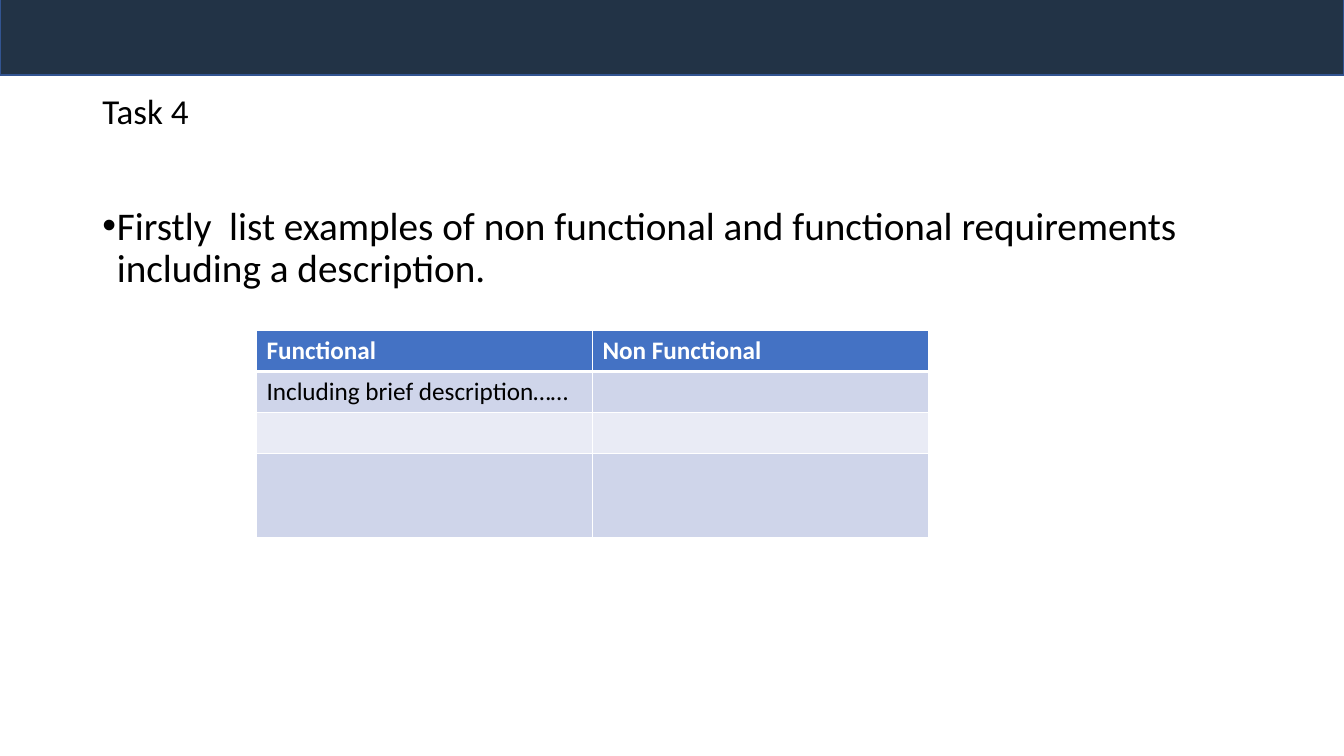
from dataclasses import dataclass

from lxml.etree import SubElement
from pptx import Presentation
from pptx.dml.color import RGBColor as RGB
from pptx.enum.shapes import MSO_SHAPE as Shape
from pptx.enum.text import MSO_ANCHOR as Anchor, PP_ALIGN as Align
from pptx.oxml.ns import qn
from pptx.util import Pt

TITLE = "Task 4"
INSTRUCTION = "Firstly  list examples of non functional and functional requirements including a description."
REQUIREMENTS = [
    ("Functional", "Non Functional"),
    ("Including brief description……", ""),
    ("", ""),
    ("", ""),
]
ROW_HEIGHTS = (29.2, 29.2, 29.2, 60)
COLUMN_WIDTH = 240


@dataclass(frozen=True)
class Theme:
    font: str = "Calibri"
    title_size: float = 25
    body_size: float = 28
    table_size: float = 18
    ink: str = "000000"
    white: str = "FFFFFF"
    banner: str = "223346"
    banner_edge: str = "325491"
    header: str = "4472C4"
    bands: tuple = ("E9EBF5", "CFD5EA")


THEME = Theme()


def write(frame, text, size, color=THEME.ink, bold=False, spacing=1.0, bullet=None, indent=0):
    frame.word_wrap = True
    paragraph = frame.paragraphs[0]
    paragraph.alignment = Align.LEFT
    paragraph.line_spacing = spacing
    if bullet:
        properties = paragraph._p.get_or_add_pPr()
        properties.set("marL", str(Pt(indent)))
        properties.set("indent", str(-Pt(indent)))
        SubElement(properties, qn("a:buFont"), typeface="Arial")
        SubElement(properties, qn("a:buChar"), char=bullet)
    font = paragraph.font
    if text:
        run = paragraph.add_run()
        run.text = text
        font = run.font
    font.name, font.size, font.bold = THEME.font, Pt(size), bold
    font.color.rgb = RGB.from_string(color)


def add_borders(cell, **widths):
    properties = cell._tc.get_or_add_tcPr()
    for side in "LRTB":
        line = SubElement(properties, qn(f"a:ln{side}"), w=str(Pt(widths.get(side, 1))))
        fill = SubElement(line, qn("a:solidFill"))
        SubElement(fill, qn("a:srgbClr"), val=THEME.white)


def add_banner(slide):
    banner = slide.shapes.add_shape(Shape.RECTANGLE, 0, Pt(-2.5), Pt(960), Pt(56))
    banner.shadow.inherit = False
    banner.fill.solid()
    banner.fill.fore_color.rgb = RGB.from_string(THEME.banner)
    banner.line.color.rgb = RGB.from_string(THEME.banner_edge)
    banner.line.width = Pt(1)


def add_requirements(slide):
    columns = len(REQUIREMENTS[0])
    table = slide.shapes.add_table(
        len(REQUIREMENTS), columns, Pt(183.2), Pt(236.2),
        Pt(COLUMN_WIDTH * columns), Pt(sum(ROW_HEIGHTS)),
    ).table
    for column in table.columns:
        column.width = Pt(COLUMN_WIDTH)
    for row, (entries, height) in enumerate(zip(REQUIREMENTS, ROW_HEIGHTS)):
        table.rows[row].height = Pt(height)
        is_header = row == 0
        for column, entry in enumerate(entries):
            cell = table.cell(row, column)
            add_borders(cell, T=3 if row == 1 else 1, B=3 if is_header else 1)
            cell.fill.solid()
            cell.fill.fore_color.rgb = RGB.from_string(THEME.header if is_header else THEME.bands[row % 2])
            write(cell.text_frame, entry, THEME.table_size, bold=is_header,
                  color=THEME.white if is_header else THEME.ink)


def main():
    """Build the requirements task slide and save it."""
    deck = Presentation()
    deck.slide_width, deck.slide_height = Pt(960), Pt(540)
    slide = deck.slides.add_slide(deck.slide_layouts[5])
    add_banner(slide)

    title = slide.shapes.title
    title.left, title.top, title.width, title.height = Pt(66), Pt(28.75), Pt(828), Pt(104.4)
    title.text_frame.vertical_anchor = Anchor.MIDDLE
    write(title.text_frame, TITLE, THEME.title_size, spacing=0.9)

    instruction = slide.shapes.add_textbox(Pt(66), Pt(143.75), Pt(828), Pt(342.6))
    write(instruction.text_frame, INSTRUCTION, THEME.body_size, spacing=0.9, bullet="•", indent=10.4)

    add_requirements(slide)
    deck.save("out.pptx")


if __name__ == "__main__":
    main()
